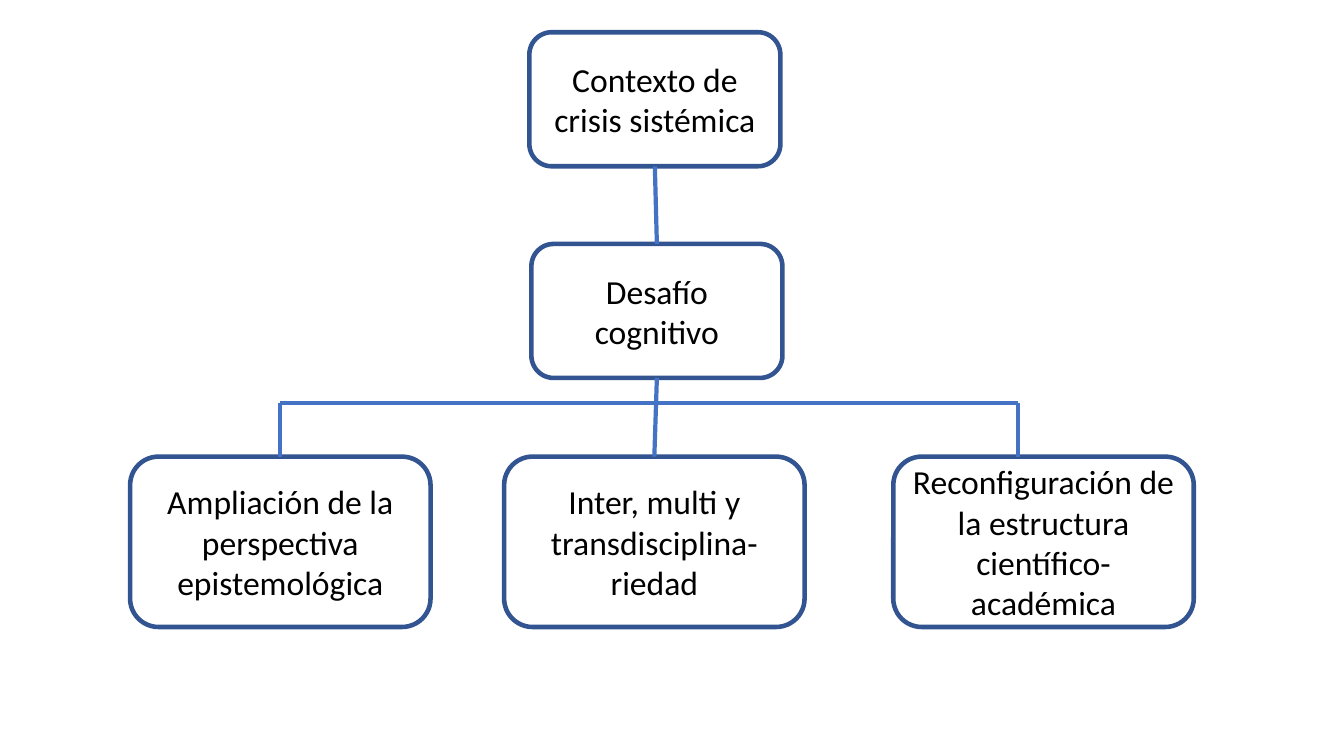
from lxml import etree
from pptx import Presentation
from pptx.dml.color import RGBColor
from pptx.enum.shapes import MSO_CONNECTOR, MSO_SHAPE
from pptx.enum.text import MSO_ANCHOR, PP_ALIGN
from pptx.oxml.ns import qn
from pptx.util import Pt

ROUNDED = MSO_SHAPE.ROUNDED_RECTANGLE
STRAIGHT = MSO_CONNECTOR.STRAIGHT
MIDDLE = MSO_ANCHOR.MIDDLE
CENTER = PP_ALIGN.CENTER
TOP, BOTTOM = 0, 2
EMU_PER_PX = 9144  # 100 px to the inch


def px(n):
    return n * EMU_PER_PX


def rgb(value):
    return RGBColor.from_string(value)


class Diagram:
    FONT, SIZE, TEXT = "Calibri", 24, "000000"
    BORDER, BORDER_WIDTH = "325491", 3.25
    LINK, LINK_WIDTH = "4472C4", 3

    def __init__(self, slide):
        self.s = slide

    def box(self, x, y, w, h, text):
        sp = self.s.shapes.add_shape(ROUNDED, px(x), px(y), px(w), px(h))
        sp.shadow.inherit = False
        sp.fill.background()
        sp.line.color.rgb = rgb(self.BORDER)
        sp.line.width = Pt(self.BORDER_WIDTH)
        tf = sp.text_frame
        tf.word_wrap = True
        tf.vertical_anchor = MIDDLE
        p = tf.paragraphs[0]
        p.text = text
        p.alignment = CENTER
        p.font.name = self.FONT
        p.font.size = Pt(self.SIZE)
        p.font.color.rgb = rgb(self.TEXT)
        return sp

    def link(self, x1, y1, x2, y2, above=None, below=None):
        """Draw a line, joined to the box above and/or below it."""
        c = self.s.shapes.add_connector(STRAIGHT, px(x1), px(y1), px(x2), px(y2))
        c.line.color.rgb = rgb(self.LINK)
        c.line.width = Pt(self.LINK_WIDTH)
        etree.SubElement(c._element.spPr, qn("a:effectLst"))
        if above is not None:
            c.begin_connect(above, BOTTOM)
        if below is not None:
            c.end_connect(below, TOP)


def main():
    prs = Presentation()
    prs.slide_width, prs.slide_height = px(1333), px(750)
    d = Diagram(prs.slides.add_slide(prs.slide_layouts[6]))

    # Context and challenge
    context = d.box(525, 32, 249, 133, "Contexto de crisis sistémica")
    challenge = d.box(527, 242, 249, 133, "Desafío cognitivo")
    d.link(650, 165, 651, 242, context, challenge)

    # Three responses
    row_y, rail_y = 453, 400
    responses = [
        (129, "Ampliación de la perspectiva epistemológica"),
        (500, "Inter, multi y transdisciplina-riedad"),
        (886, "Reconfiguración de la estructura científico-académica"),
    ]
    left, middle, _ = [d.box(x, row_y, 298, 169, text) for x, text in responses]

    # Branches
    left_x, right_x = 278, 1010
    d.link(652, 375, 652, row_y, challenge, middle)
    d.link(left_x, rail_y, right_x, rail_y)
    d.link(left_x, rail_y, left_x, row_y, below=left)
    d.link(right_x, rail_y, right_x, row_y)

    prs.save("out.pptx")


if __name__ == "__main__":
    main()
